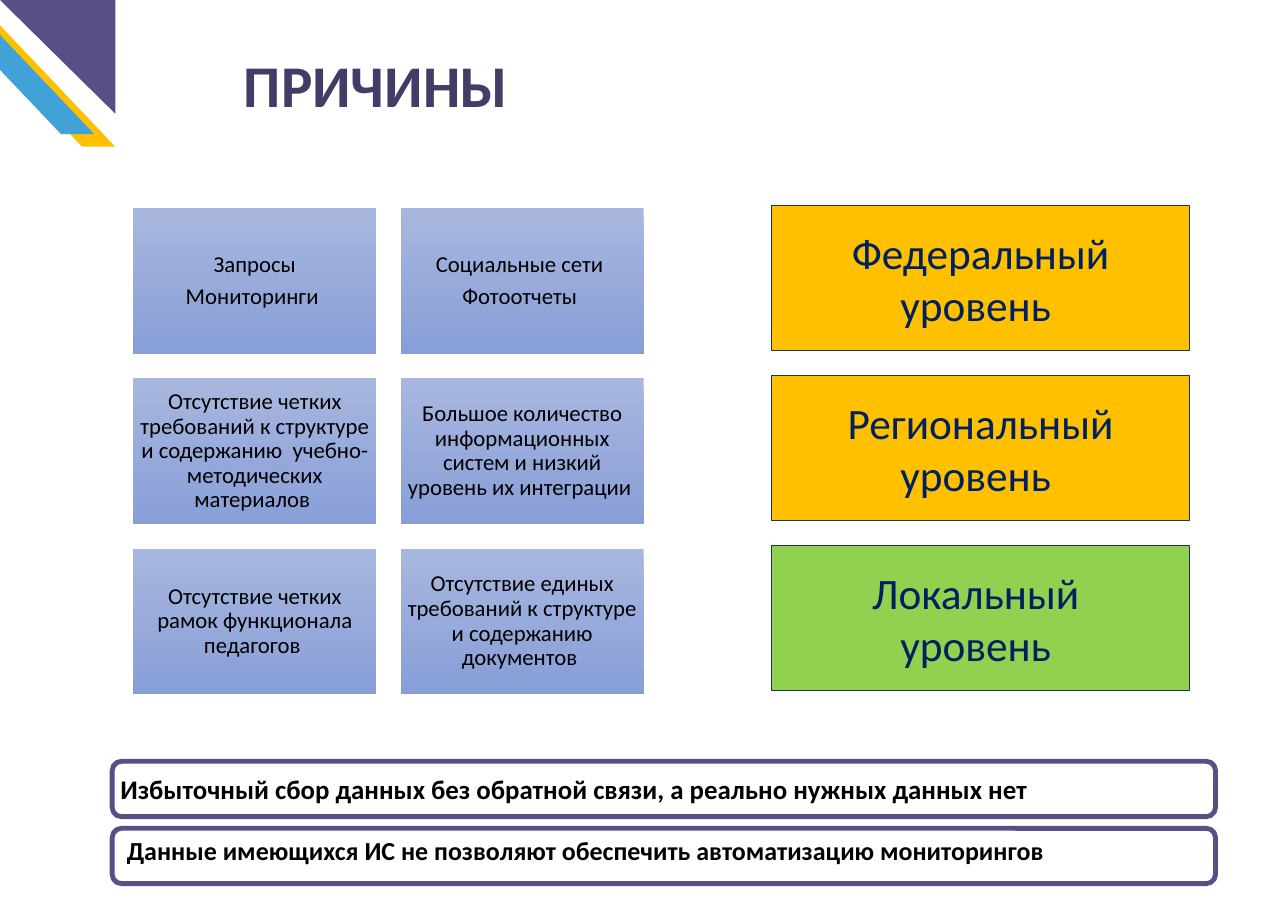
import pptx
import pptx.util
import pptx.dml.color
import pptx.enum.shapes
import pptx.enum.text

Pt = pptx.util.Pt
RGB = pptx.dml.color.RGBColor
SHAPE = pptx.enum.shapes.MSO_SHAPE
ALIGN = pptx.enum.text.PP_ALIGN
ANCHOR = pptx.enum.text.MSO_ANCHOR

PURPLE = RGB(0x56, 0x50, 0x87)
TITLE = RGB(0x42, 0x3D, 0x67)
AMBER = RGB(0xFF, 0xC0, 0x00)
BLUE = RGB(0x41, 0xA2, 0xD8)
GREEN = RGB(0x92, 0xD0, 0x50)
NAVY = RGB(0x00, 0x20, 0x60)
OUTLINE = RGB(0x1E, 0x32, 0x56)
CARD_TOP = RGB(0xA8, 0xB7, 0xDF)
CARD_BOTTOM = RGB(0x88, 0x9E, 0xD7)
BLACK = RGB(0, 0, 0)

CARDS = [
    [["Запросы", "Мониторинги "], ["Социальные сети ", "Фотоотчеты "]],
    [["Отсутствие четких требований к структуре и содержанию  учебно-методических материалов "],
     ["Большое количество информационных систем и низкий уровень их интеграции "]],
    [["Отсутствие четких рамок функционала педагогов "],
     ["Отсутствие единых требований к структуре и содержанию документов "]],
]
LEVELS = [
    (["Федеральный уровень "], AMBER),
    (["Региональный уровень "], AMBER),
    (["Локальный ", "уровень "], GREEN),
]
CONCLUSIONS = [
    ("Избыточный сбор данных без обратной связи, а реально нужных данных нет", 24.8, 5, 0),
    ("Данные имеющихся ИС не позволяют обеспечить автоматизацию мониторингов", 24, 11, 11),
]


def add_shape(s, kind, box, fill=None, line=None, width=1):
    sp = s.shapes.add_shape(kind, *map(Pt, box))
    sp.shadow.inherit = False
    if fill is None:
        sp.fill.background()
    else:
        sp.fill.solid()
        sp.fill.fore_color.rgb = fill
    if line is None:
        sp.line.fill.background()
    else:
        sp.line.color.rgb = line
        sp.line.width = Pt(width)
    return sp


def write(sp, lines, size, color, margins, para=None, bold=False, anchor=ANCHOR.MIDDLE):
    tf = sp.text_frame
    tf.word_wrap = True
    tf.vertical_anchor = anchor
    for side, value in zip(("left", "top", "right", "bottom"), margins):
        setattr(tf, f"margin_{side}", Pt(value))
    for i, text in enumerate(lines):
        p = tf.paragraphs[0] if i == 0 else tf.add_paragraph()
        for name, value in (para or {"alignment": ALIGN.LEFT}).items():
            setattr(p, name, value)
        r = p.add_run()
        r.text = text
        for name, value in {"name": "Calibri", "size": Pt(size), "bold": bold}.items():
            setattr(r.font, name, value)
        r.font.color.rgb = color


def add_corner(s, x, y, w, h):
    for dx, dy, color in ((-57, -4.3, AMBER), (-76.3, -15.8, BLUE)):
        stripe = add_shape(s, SHAPE.PARALLELOGRAM, (x + dx, y + dy, 163.4, 139.7), color)
        stripe.adjustments[0] = 0.95
        stripe._element.spPr.xfrm.set("flipH", "1")
    add_shape(s, SHAPE.RIGHT_TRIANGLE, (x, y, w, h), PURPLE).rotation = 180


def add_title(s, x, y, w, h):
    sp = s.shapes.add_textbox(*map(Pt, (x, y, w, h)))
    write(sp, ["ПРИЧИНЫ"], 54.6, TITLE, (0, 3.6, 7.2, 3.6), bold=True, anchor=ANCHOR.TOP)


def add_cards(s, x, y, w, h, gap=22.5):
    card_w = (w - gap) / 2
    card_h = (h - 2 * gap) / 3
    para = {"alignment": ALIGN.CENTER, "line_spacing": 0.9, "space_after": Pt(7.35)}
    for row, cells in enumerate(CARDS):
        for col, lines in enumerate(cells):
            box = (x + col * (card_w + gap), y + row * (card_h + gap), card_w, card_h)
            sp = add_shape(s, SHAPE.RECTANGLE, box, CARD_TOP)
            sp.fill.gradient()
            sp.fill.gradient_angle = 270
            for stop, color in zip(sp.fill.gradient_stops, (CARD_TOP, CARD_BOTTOM)):
                stop.color.rgb = color
            write(sp, lines, 21, BLACK, (6.3,) * 4, para)


def add_levels(s, x, y, w, h, gap=23):
    level_h = (h - 2 * gap) / 3
    for i, (lines, color) in enumerate(LEVELS):
        box = (x, y + i * (level_h + gap), w, level_h)
        sp = add_shape(s, SHAPE.RECTANGLE, box, color, OUTLINE)
        write(sp, lines, 40, NAVY, (7.2, 3.6, 7.2, 3.6), {"alignment": ALIGN.CENTER})


def add_conclusions(s, x, y, w, h, gap=10.8):
    bar_h = (h - gap) / 2
    for i, (text, size, left, bottom) in enumerate(CONCLUSIONS):
        box = (x, y + i * (bar_h + gap), w, bar_h)
        sp = add_shape(s, SHAPE.ROUNDED_RECTANGLE, box, None, PURPLE, 4.5)
        write(sp, [text], size, BLACK, (left, 0, 5, bottom), bold=True)


def main():
    prs = pptx.Presentation()
    prs.slide_width, prs.slide_height = Pt(1190.16), Pt(841.68)
    s = prs.slides.add_slide(prs.slide_layouts[6])
    add_corner(s, 0, 0, 106.6, 105.1)
    add_title(s, 225.4, 41, 667.4, 73.4)
    add_cards(s, 123.1, 192.3, 471.7, 449.2)
    add_levels(s, 712.8, 190.1, 386.6, 447.8)
    add_conclusions(s, 103.7, 703.4, 1019.5, 113)
    prs.save("out.pptx")


if __name__ == "__main__":
    main()
